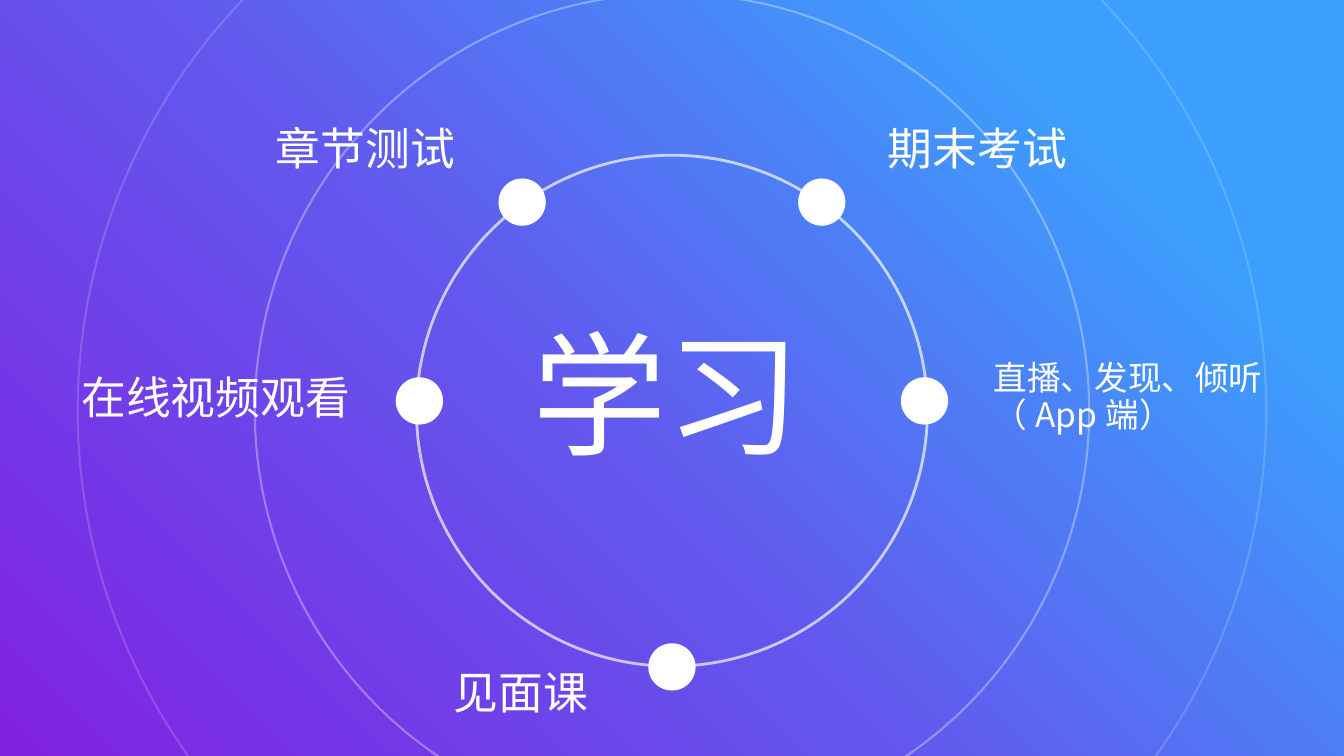
from copy import deepcopy

from lxml import etree
from pptx import Presentation
from pptx.dml.color import RGBColor
from pptx.enum.shapes import MSO_SHAPE
from pptx.enum.text import MSO_ANCHOR, PP_ALIGN
from pptx.oxml.ns import qn
from pptx.util import Pt

OVAL = MSO_SHAPE.OVAL
TOP = MSO_ANCHOR.TOP
LEFT = PP_ALIGN.LEFT

COLORS = {"purple": "8022E2", "indigo": "6455ED", "blue": "3C9FFD", "white": "FFFFFF"}
FONT = "Noto Sans CJK SC"
CENTER_X, CENTER_Y = 480, 293.4
DOT_SIZE = 33.8

# Background stops: colour, position
STOPS = [("purple", 0.01), ("indigo", 0.42), ("blue", 0.82)]
# Rings: radius, line width, opacity in percent
INNER_RING = (182.5, 2, 68)
OUTER_RINGS = [(298, 1.5, 32), (424.5, 1.5, 17)]
# Dots: offset from the ring centre
DOTS = [(-107, -149), (107, -149), (0, 183), (-180.4, -7), (180.4, -7)]
# Labels: text, left, top, width, height, font size
LABELS = [
    ("在线视频观看", 51, 265, 236, 46, 32),
    ("章节测试", 190, 87, 161, 46, 32),
    ("直播、发现、倾听（App端）", 702.7, 254.9, 275.8, 65.5, 24),
    ("见面课", 316.8, 475.9, 130.3, 46, 32),
    ("期末考试", 627.1, 87, 151.2, 46, 32),
]


def rgb(name):
    return RGBColor.from_string(COLORS[name])


def paint_background(page):
    fill = page.background.fill
    fill.gradient()
    fill.gradient_angle = 45
    first_stop = next(page.element.iter(qn("a:gs")))
    first_stop.addnext(deepcopy(first_stop))
    for stop, (color, position) in zip(fill.gradient_stops, STOPS):
        stop.color.rgb = rgb(color)
        stop.position = position


def add_circle(page, x, y, radius):
    circle = page.shapes.add_shape(
        OVAL, Pt(x - radius), Pt(y - radius), Pt(2 * radius), Pt(2 * radius))
    circle.shadow.inherit = False
    return circle


def add_ring(page, radius, width, opacity):
    ring = add_circle(page, CENTER_X, CENTER_Y, radius)
    ring.fill.background()
    ring.line.width = Pt(width)
    ring.line.color.rgb = rgb("white")
    color = next(ring.line._ln.iter(qn("a:srgbClr")))
    etree.SubElement(color, qn("a:alpha"), val=str(opacity * 1000))


def add_dot(page, offset_x, offset_y):
    dot = add_circle(page, CENTER_X + offset_x, CENTER_Y + offset_y, DOT_SIZE / 2)
    dot.fill.solid()
    dot.fill.fore_color.rgb = rgb("white")
    dot.line.fill.background()


def write_text(box, text, size):
    frame = box.text_frame
    frame.word_wrap = True
    frame.vertical_anchor = TOP
    para = frame.paragraphs[0]
    for name, value in {"alignment": LEFT, "line_spacing": 0.9,
                        "space_before": Pt(0)}.items():
        setattr(para, name, value)
    span = para.add_run()
    span.text = text
    for name, value in {"name": FONT, "size": Pt(size), "bold": False}.items():
        setattr(span.font, name, value)
    span.font.color.rgb = rgb("white")
    # East Asian characters take their own typeface
    properties = span._r.get_or_add_rPr()
    etree.SubElement(properties, qn("a:ea"), typeface=FONT)


def add_label(page, text, left, top, width, height, size):
    box = page.shapes.add_textbox(Pt(left), Pt(top), Pt(width), Pt(height))
    write_text(box, text, size)


def place_title(page, text):
    title = page.shapes.title
    for name, value in {"left": 373, "top": 231.8, "width": 213.8, "height": 123.8}.items():
        setattr(title, name, Pt(value))
    write_text(title, text, 96)


def main():
    deck = Presentation()
    deck.slide_width, deck.slide_height = Pt(960), Pt(540)
    page = deck.slides.add_slide(deck.slide_layouts[5])
    paint_background(page)

    # Centre topic and its ring
    place_title(page, "学习")
    add_ring(page, *INNER_RING)

    # Learning steps around the ring
    for label in LABELS:
        add_label(page, *label)
    for dot in DOTS:
        add_dot(page, *dot)

    # Fading outer rings
    for ring in OUTER_RINGS:
        add_ring(page, *ring)

    deck.save("out.pptx")


if __name__ == "__main__":
    main()
